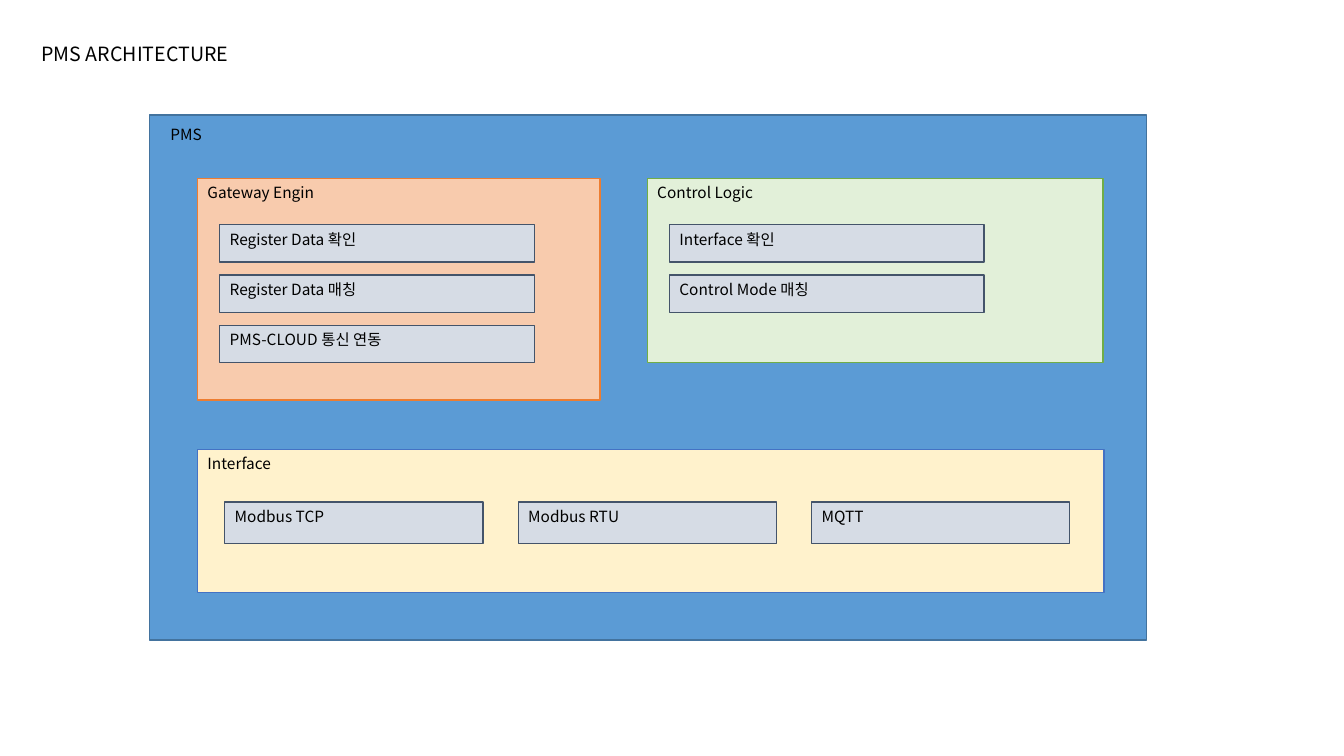
from pptx import Presentation
from pptx.dml.color import RGBColor
from pptx.enum.shapes import MSO_SHAPE
from pptx.enum.text import MSO_ANCHOR, MSO_AUTO_SIZE, PP_ALIGN
from pptx.util import Inches, Pt

COLOURS = {
    "text": "000000",
    "pms": "5B9BD5", "pms_line": "43739E",
    "gateway": "F8CBAD", "gateway_line": "ED7D31",
    "control": "E2F0D9", "control_line": "70AD47",
    "interface": "FFF2CC", "interface_line": "4472C4",
    "module": "D6DCE5", "module_line": "44546A",
}


class ArchitectureSlide:
    """Draws the labelled blocks of an architecture on one slide."""

    font_name = "Noto Sans CJK KR"
    label_size = 11
    title_size = 14

    def __init__(self, slide):
        self.slide = slide

    def colour(self, key):
        return RGBColor.from_string(COLOURS[key])

    def set_text(self, frame, text, size):
        frame.text = text
        frame.word_wrap = True
        frame.auto_size = MSO_AUTO_SIZE.SHAPE_TO_FIT_TEXT
        frame.vertical_anchor = MSO_ANCHOR.TOP
        paragraph = frame.paragraphs[0]
        paragraph.alignment = PP_ALIGN.LEFT
        font = paragraph.runs[0].font
        font.name = self.font_name
        font.size = Pt(size)
        font.color.rgb = self.colour("text")

    def title(self, text, left, top, width, height):
        heading = self.slide.shapes.title
        heading.left, heading.top = Inches(left), Inches(top)
        heading.width, heading.height = Inches(width), Inches(height)
        self.set_text(heading.text_frame, text, self.title_size)

    def block(self, kind, left, top, width, height):
        block = self.slide.shapes.add_shape(
            MSO_SHAPE.RECTANGLE, Inches(left), Inches(top), Inches(width), Inches(height))
        block.shadow.inherit = False
        block.fill.solid()
        block.fill.fore_color.rgb = self.colour(kind)
        block.line.color.rgb = self.colour(f"{kind}_line")
        block.line.width = Pt(1)

    def label(self, text, left, top, width):
        label = self.slide.shapes.add_textbox(
            Inches(left), Inches(top), Inches(width), Inches(0.29))
        self.set_text(label.text_frame, text, self.label_size)

    def labelled_block(self, kind, text, left, top, width, height, label_width=1.53):
        self.block(kind, left, top, width, height)
        self.label(text, left, top, label_width)

    def module_stack(self, names, left, top=2.23, pitch=0.5):
        for row, name in enumerate(names):
            self.labelled_block("module", name, left, top + row * pitch, 3.12, 0.37, 2)

    def module_row(self, names, left, top, pitch):
        for column, name in enumerate(names):
            self.labelled_block("module", name, left + column * pitch, top, 2.56, 0.41)


def main():
    presentation = Presentation()
    presentation.slide_width = Inches(13.33)
    presentation.slide_height = Inches(7.5)
    page = ArchitectureSlide(presentation.slides.add_slide(presentation.slide_layouts[5]))

    page.title("PMS ARCHITECTURE", 0.31, 0.37, 3.26, 0.34)
    page.block("pms", 1.48, 1.14, 9.89, 5.21)
    page.label("PMS", 1.59, 1.19, 1.18)

    page.labelled_block("gateway", "Gateway Engin", 1.96, 1.77, 3.99, 2.2)
    page.module_stack(["Register Data 확인", "Register Data 매칭", "PMS-CLOUD 통신 연동"], 2.18)

    page.labelled_block("control", "Control Logic", 6.42, 1.77, 4.52, 1.83)
    page.module_stack(["Interface 확인", "Control Mode 매칭"], 6.64)

    page.labelled_block("interface", "Interface", 1.96, 4.46, 8.99, 1.42)
    page.module_row(["Modbus TCP", "Modbus RTU", "MQTT"], 2.23, 4.98, 2.91)

    presentation.save("out.pptx")


if __name__ == "__main__":
    main()
